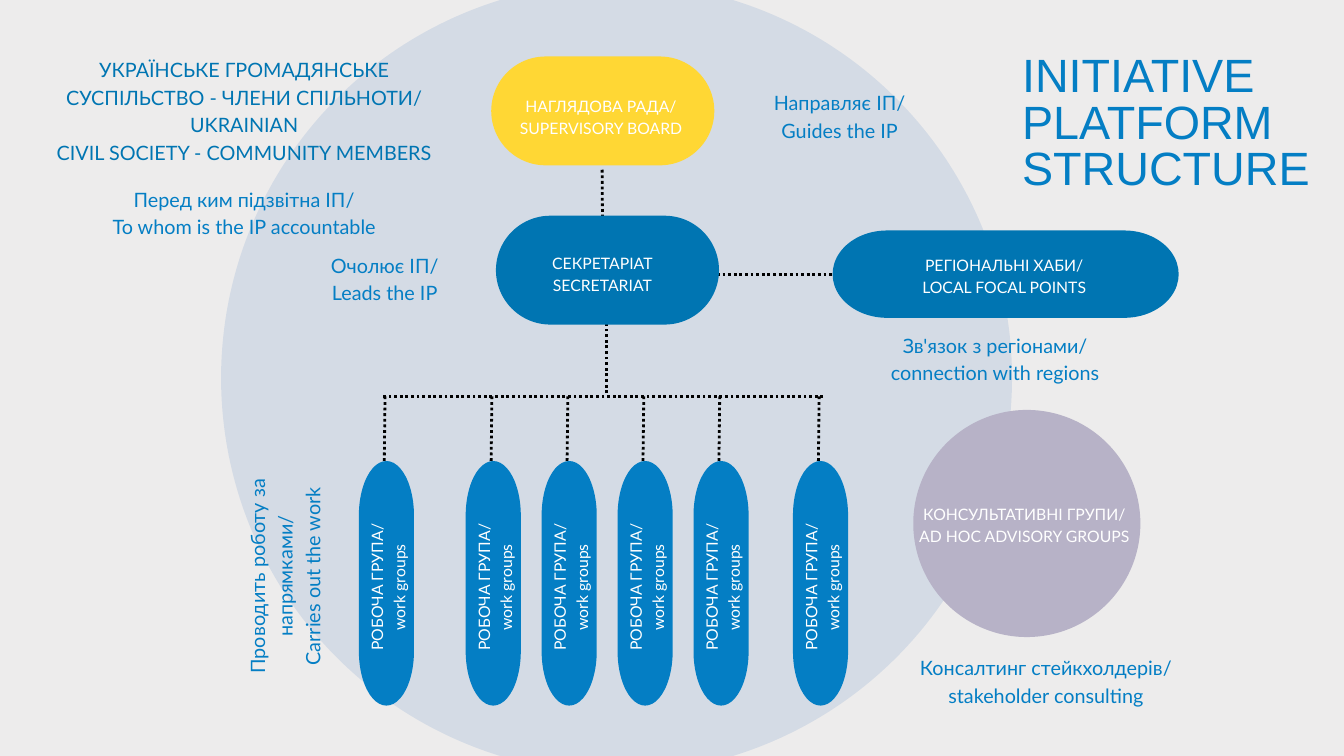
"""Builds the platform structure slide on a grid of 200 columns by 112.5 rows."""
from lxml import etree
from pptx import Presentation
from pptx.dml.color import RGBColor
from pptx.enum.dml import MSO_LINE
from pptx.enum.shapes import MSO_CONNECTOR, MSO_SHAPE
from pptx.enum.text import MSO_ANCHOR, PP_ALIGN
from pptx.oxml.ns import qn
from pptx.util import Inches, Pt

LEFT, CENTER = PP_ALIGN.LEFT, PP_ALIGN.CENTER
TOP = MSO_ANCHOR.TOP
OVAL, STRAIGHT = MSO_SHAPE.OVAL, MSO_CONNECTOR.STRAIGHT
DOTS = MSO_LINE.ROUND_DOT
COLS, ROWS, CELL = 200, 112.5, 0.1
TURN, DEGREE = 270, 60000
SKY, DEEP, GOLD, MAUVE = "047EC4", "0075B2", "FFD734", "B7B2C7"
WHITE, BLACK, PALE, NAVY = "FFFFFF", "000000", "EDECEC", "004AAD"

TITLE = ["INITIATIVE PLATFORM", "STRUCTURE"]
DISCS = [((32.9, -2.6, 117.7, 117.7), NAVY, 10), ((135.9, 61, 33.8, 33.8), MAUVE, 100)]
PILLS = [
    ((73.1, 8.4, 33.2, 16.2), GOLD),
    ((73.8, 32.1, 33.2, 16.2), DEEP),
    ((123.9, 34.3, 51.5, 13), DEEP),
]
LABELS = [
    ((74.1, 13.9, 30.7, 6.2), ["НАГЛЯДОВА РАДА/", "SUPERVISORY BOARD"]),
    ((74.3, 37.3, 30.7, 6.2), ["СЕКРЕТАРІАТ", "SECRETARIAT"]),
    ((134.1, 37.6, 30.7, 6.2), ["РЕГІОНАЛЬНІ ХАБИ/", "LOCAL FOCAL POINTS"]),
    ((135.2, 74.6, 34.5, 6.2), ["КОНСУЛЬТАТИВНІ ГРУПИ/", "AD HOC ADVISORY GROUPS"]),
]
NOTES = [
    ((114, 12.9, 21.9, 8), ["Направляє ІП/", "Guides the IP"], SKY, 0),
    ((48.5, 37.1, 17.5, 8), ["Очолює ІП/", "Leads the IP"], SKY, 0),
    ((23.3, 79.7, 37.3, 12.1),
     ["Проводить роботу за", "напрямками/", "Carries out the work"], SKY, TURN),
    ((5.8, 8, 61.1, 16.2),
     ["УКРАЇНСЬКЕ ГРОМАДЯНСЬКЕ СУСПІЛЬСТВО - ЧЛЕНИ СПІЛЬНОТИ/", "UKRAINIAN",
      "CIVIL SOCIETY - COMMUNITY MEMBERS"], DEEP, 0),
    ((130.8, 49, 34.6, 8), ["Зв'язок з регіонами/", "connection with regions"], SKY, 0),
    ((134.4, 97, 42.5, 8), ["Консалтинг стейкхолдерів/", "stakeholder consulting"], SKY, 0),
    ((14.5, 27.3, 43.7, 8), ["Перед ким підзвітна ІП/", "To whom is the IP accountable"], SKY, 0),
]
GROUP = ["РОБОЧА ГРУПА/", "work groups"]
STEP = 11.3
MIDS = [57.5, *(73.4 + STEP * i for i in range(4)), 122.1]
LINKS = [
    (89.7, 38.2, 89.6, 24.9),
    (90.2, 58.5, 90.2, 41.3),
    (106.7, 40.9, 123.9, 40.9),
    (122.5, 59, 56.9, 59),
    *((mid - 0.4, 76.1, mid - 0.2, 58.9) for mid in MIDS),
]


def size(*cells):
    """Turns grid cells into slide lengths."""
    return [Inches(cell * CELL) for cell in cells]


def tint(name):
    """Turns a hex string into a colour."""
    return RGBColor.from_string(name)


def paint(shape, color, alpha=100):
    """Gives a shape a flat fill with no line or shadow."""
    shape.shadow.inherit = False
    shape.fill.solid()
    shape.fill.fore_color.rgb = tint(color)
    shape.line.fill.background()
    if alpha < 100:
        node = shape._element.spPr.find(".//" + qn("a:srgbClr"))
        etree.SubElement(node, qn("a:alpha"), val=str(alpha * 1000))


def pill(slide, box, color, turn=0, cap=8.1):
    """Draws a bar with half an ellipse at each end."""
    x, y, w, h = box
    dots = [(cap, 0), (w - cap, 0), (w, h / 2), (w - cap, h), (cap, h), (0, h / 2)]
    dots = [size(x + dx, y + dy) for dx, dy in dots]
    draft = slide.shapes.build_freeform(*dots[0])
    draft.add_line_segments(dots[1:], close=True)
    shape = draft.convert_to_shape()
    route = next(shape._element.iter(qn("a:path")))
    wide, high = (str(side) for side in size(cap, h / 2))
    steps = list(route)
    for step, start in [(steps[2], 270), (steps[5], 90)]:
        arc = etree.Element(qn("a:arcTo"), wR=wide, hR=high,
                            stAng=str(start * DEGREE), swAng=str(180 * DEGREE))
        route.replace(step, arc)
    route.remove(steps[3])
    shape.rotation = turn
    paint(shape, color)


def link(slide, ends):
    """Draws a dotted line."""
    line = slide.shapes.add_connector(STRAIGHT, *size(*ends))
    line.line.color.rgb = tint(BLACK)
    line.line.width = Pt(3)
    line.line.dash_style = DOTS
    etree.SubElement(line._element.spPr, qn("a:effectLst"))


def write(shape, lines, pts=16.9, lead=23.7, font="Lato", color=WHITE, align=CENTER):
    """Fills a shape with formatted lines of text."""
    frame = shape.text_frame
    frame.word_wrap = True
    frame.vertical_anchor = TOP
    frame.margin_left = frame.margin_right = frame.margin_top = frame.margin_bottom = 0
    for i, line in enumerate(lines):
        para = frame.add_paragraph() if i else frame.paragraphs[0]
        para.alignment = align
        para.line_spacing = Pt(lead)
        para.space_before = para.space_after = Pt(0)
        run = para.add_run()
        run.text = line
        run.font.size = Pt(pts)
        run.font.name = font
        run.font.color.rgb = tint(color)


def label(slide, box, lines, turn=0, **look):
    """Adds a text box, turned if asked."""
    shape = slide.shapes.add_textbox(*size(*box))
    shape.rotation = turn
    write(shape, lines, **look)


def main():
    """Builds and saves the slide."""
    deck = Presentation()
    deck.slide_width, deck.slide_height = size(COLS, ROWS)
    slide = deck.slides.add_slide(deck.slide_layouts[5])
    slide.background.fill.solid()
    slide.background.fill.fore_color.rgb = tint(PALE)
    for box, color, alpha in DISCS:
        paint(slide.shapes.add_shape(OVAL, *size(*box)), color, alpha)
    for ends in LINKS:
        link(slide, ends)
    for box, color in PILLS:
        pill(slide, box, color)
    for box, lines in LABELS:
        label(slide, box, lines)
    for mid in MIDS:
        pill(slide, (mid - 18.2, 82.7, 36.4, 8.2), SKY, TURN)
        label(slide, (mid - 11.1, 84.3, 21.8, 6.2), GROUP, TURN)
    for box, lines, color, turn in NOTES:
        label(slide, box, lines, turn, pts=21.2, lead=29.7, color=color)
    title = slide.shapes.title
    title.left, title.top, title.width, title.height = size(152.1, 8.2, 45.5, 21.1)
    write(title, TITLE, pts=50, lead=50, font="Arial", color=SKY, align=LEFT)
    deck.save("out.pptx")


if __name__ == "__main__":
    main()
